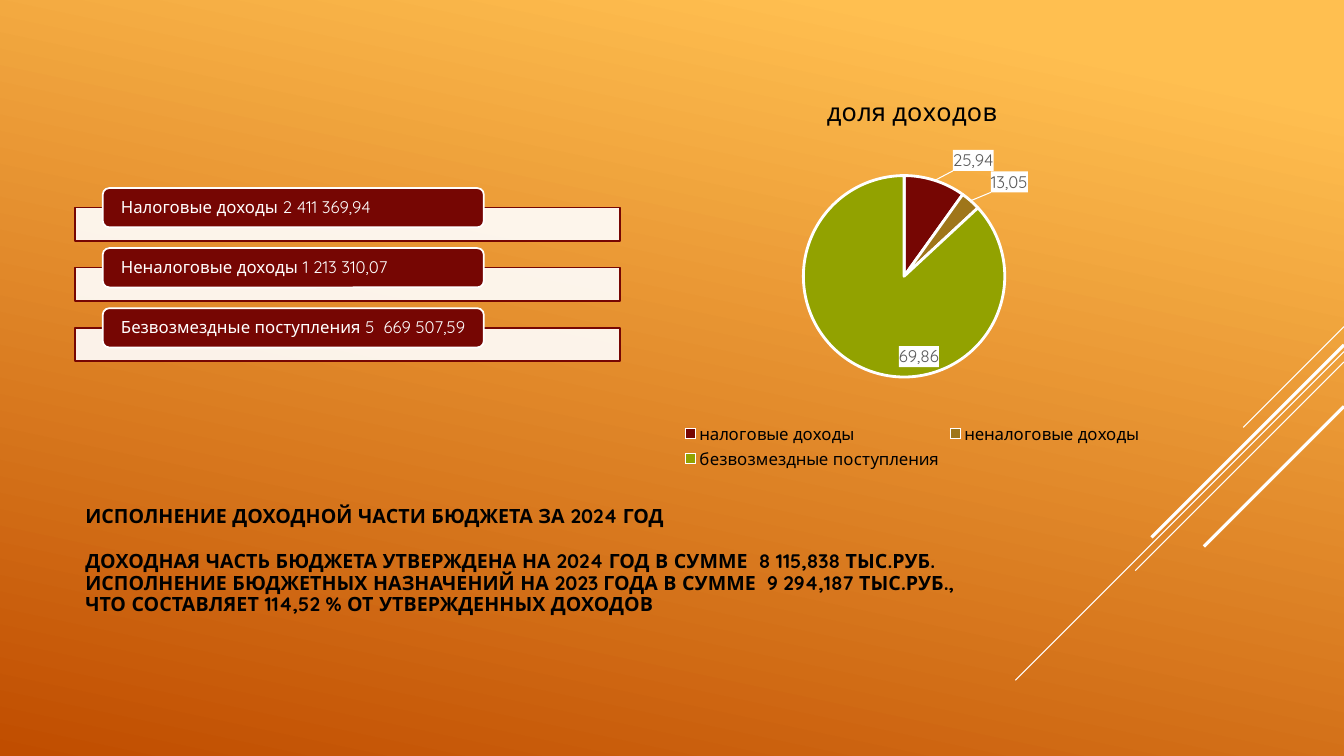
from dataclasses import dataclass

from lxml.etree import SubElement
from pptx import Presentation
from pptx.chart.data import CategoryChartData
from pptx.dml.color import RGBColor
from pptx.enum.chart import XL_CHART_TYPE, XL_LABEL_POSITION, XL_LEGEND_POSITION
from pptx.enum.shapes import MSO_CONNECTOR, MSO_SHAPE
from pptx.enum.text import MSO_ANCHOR, PP_ALIGN
from pptx.oxml import parse_xml
from pptx.oxml.ns import nsdecls, qn
from pptx.util import Cm, Pt


@dataclass(frozen=True)
class Theme:
    font: str = "Quicksand"
    glow: str = "FFBF50"
    ember: str = "C04D00"
    white: str = "FFFFFF"
    black: str = "000000"
    label: str = "595959"
    wine: str = "760603"
    slices: tuple = ("760603", "9F761A", "92A200")
    chart_title: int = 18
    heading: int = 14
    body: int = 12


THEME = Theme()
WIDTH, HEIGHT = 33.87, 19.05

# Top of each diagonal at the right edge, its run to the left, line width
DIAGONALS = [(8.23, 2.54, 0.75), (8.86, 8.28, 0.75), (9.12, 5.26, 0.75),
             (8.69, 4.85, 2.25), (10.24, 3.53, 2.25)]
INCOMES = ["Налоговые доходы 2 411 369,94",
           "Неналоговые доходы 1 213 310,07",
           "Безвозмездные поступления 5  669 507,59"]
SUMMARY = [["ИСПОЛНЕНИЕ ДОХОДНОЙ ЧАСТИ БЮДЖЕТА ЗА 2024 ГОД"],
           ["ДОХОДНАЯ ЧАСТЬ БЮДЖЕТА УТВЕРЖДЕНА НА 2024 ГОД В СУММЕ  8 115,838 ТЫС.РУБ.",
            "ИСПОЛНЕНИЕ БЮДЖЕТНЫХ НАЗНАЧЕНИЙ НА 2023 ГОДА В СУММЕ  9 294,187 ТЫС.РУБ.,",
            "ЧТО СОСТАВЛЯЕТ 114,52 % ОТ УТВЕРЖДЕННЫХ ДОХОДОВ"]]
SHARES = {"налоговые доходы": 9.9, "неналоговые доходы": 3.2,
          "безвозмездные поступления": 86.9}
# Label text, side of the slice edge, shift as a share of the chart
LABELS = [("25,94", XL_LABEL_POSITION.OUTSIDE_END, 0.03, -0.01),
          ("13,05", XL_LABEL_POSITION.OUTSIDE_END, 0.03, -0.01),
          ("69,86", XL_LABEL_POSITION.INSIDE_END, 0.06, 0.01)]


def rgb(color):
    return RGBColor.from_string(color)


def style_font(font, size, color, bold=False):
    font.name, font.size, font.bold = THEME.font, Pt(size), bold
    font.color.rgb = rgb(color)


def add_span(para, text, size, color, bold=False):
    span = para.add_run()
    span.text = text
    style_font(span.font, size, color, bold)


def add_panel(page, kind, box, fill, line):
    panel = page.shapes.add_shape(kind, *(Cm(length) for length in box))
    panel.shadow.inherit = False
    panel.fill.solid()
    panel.fill.fore_color.rgb = rgb(fill)
    panel.line.color.rgb = rgb(line)
    panel.line.width = Pt(1.25)
    return panel


def paint_background(page):
    fill = page.background.fill
    fill.gradient()
    fill.gradient_angle = 258
    stops = zip(fill.gradient_stops, (THEME.glow, THEME.ember), (0.1, 1.0))
    for stop, color, position in stops:
        stop.color.rgb = rgb(color)
        stop.position = position


def add_diagonals(page, right):
    for top, run, width in DIAGONALS:
        line = page.shapes.add_connector(MSO_CONNECTOR.STRAIGHT, Cm(right), Cm(top),
                                         Cm(right - run), Cm(top + run))
        line.line.color.rgb = rgb(THEME.white)
        line.line.width = Pt(width)
        SubElement(line._element.spPr, qn("a:effectLst"))


def add_income_list(page, box):
    left, top, width, height = box
    pitch = height / len(INCOMES)
    for index, income in enumerate(INCOMES):
        row = top + index * pitch
        # Pale band behind
        band = add_panel(page, MSO_SHAPE.RECTANGLE, (left, row + 0.49, width, 0.84),
                         THEME.white, THEME.wine)
        tint = band.fill._xPr.find(".//" + qn("a:srgbClr"))
        SubElement(tint, qn("a:alpha"), val="90000")
        # Dark plate with the amount
        plate = add_panel(page, MSO_SHAPE.ROUNDED_RECTANGLE,
                          (left + 0.69, row, width * 0.7, 0.99), THEME.wine, THEME.white)
        frame = plate.text_frame
        frame.word_wrap = True
        frame.vertical_anchor = MSO_ANCHOR.MIDDLE
        frame.margin_left = frame.margin_right = Cm(0.41)
        frame.margin_top = frame.margin_bottom = 0
        para = frame.paragraphs[0]
        para.alignment = PP_ALIGN.LEFT
        para.line_spacing = 0.9
        add_span(para, income, THEME.body, THEME.white)


def add_summary(page, box):
    frame = page.shapes.add_textbox(*(Cm(length) for length in box)).text_frame
    frame.word_wrap = True
    for index, lines in enumerate(SUMMARY):
        para = frame.add_paragraph() if index else frame.paragraphs[0]
        para.line_spacing = 0.9
        para.space_before = Pt(17 * index)
        for number, line in enumerate(lines):
            if number:
                para.add_line_break()
            add_span(para, line, THEME.heading, THEME.black, True)


def manual_layout(**places):
    parts = "".join(f'<c:{name} val="{value}"/>' for name, value in places.items())
    return parse_xml(f'<c:layout {nsdecls("c")}><c:manualLayout>{parts}'
                     '</c:manualLayout></c:layout>')


def label_slices(series):
    for index, (text, position, shift_x, shift_y) in enumerate(LABELS):
        label = series.points[index].data_label
        add_span(label.text_frame.paragraphs[0], text, THEME.body, THEME.label)
        label.position = position
        node = series._element.xpath(f"c:dLbls/c:dLbl[c:idx/@val={index}]")[0]
        node.find(qn("c:idx")).addnext(manual_layout(x=shift_x, y=shift_y))
        node.find(qn("c:tx")).addnext(parse_xml(
            f'<c:spPr {nsdecls("c", "a")}><a:solidFill><a:srgbClr val="{THEME.white}"/>'
            '</a:solidFill></c:spPr>'))
    labels = series.data_labels
    labels.show_value = True
    style_font(labels.font, THEME.body, THEME.label)
    # White leader lines
    for old in labels._element.xpath("c:showLeaderLines | c:leaderLines"):
        labels._element.remove(old)
    SubElement(labels._element, qn("c:showLeaderLines"), val="1")
    labels._element.append(parse_xml(
        f'<c:leaderLines {nsdecls("c", "a")}><c:spPr><a:ln w="9525"><a:solidFill>'
        f'<a:srgbClr val="{THEME.white}"/></a:solidFill></a:ln></c:spPr></c:leaderLines>'))


def add_share_chart(page, box):
    data = CategoryChartData()
    data.categories = list(SHARES)
    data.add_series("доля доходов", list(SHARES.values()))
    chart = page.shapes.add_chart(XL_CHART_TYPE.PIE, *(Cm(length) for length in box),
                                  data).chart
    style_font(chart.font, THEME.body, THEME.black)
    # Title and legend
    chart.has_title = True
    add_span(chart.chart_title.text_frame.paragraphs[0], "доля доходов",
             THEME.chart_title, THEME.black)
    chart.has_legend = True
    chart.legend.position = XL_LEGEND_POSITION.BOTTOM
    chart.legend.include_in_layout = False
    style_font(chart.legend.font, THEME.body, THEME.black)
    # Slices
    plot = chart.plots[0]
    plot.vary_by_categories = True
    series = plot.series[0]
    for index, color in enumerate(THEME.slices):
        look = series.points[index].format
        look.fill.solid()
        look.fill.fore_color.rgb = rgb(color)
        look.line.color.rgb = rgb(THEME.white)
        look.line.width = Pt(2)
    label_slices(series)
    # Place of the pie
    area = chart._chartSpace.xpath(".//c:plotArea")[0]
    for old in area.findall(qn("c:layout")):
        area.remove(old)
    area.insert(0, manual_layout(layoutTarget="inner", xMode="edge", yMode="edge",
                                 x=0.3, y=0.25, w=0.37, h=0.51))


def main():
    deck = Presentation()
    deck.slide_width, deck.slide_height = Cm(WIDTH), Cm(HEIGHT)
    page = deck.slides.add_slide(deck.slide_layouts[6])
    paint_background(page)
    add_diagonals(page, WIDTH)
    add_summary(page, (1.9, 12.65, 23.7, 3.3))
    add_income_list(page, (1.9, 4.74, 13.72, 4.54))
    add_share_chart(page, (16.13, 1.9, 13.72, 10.03))
    deck.save("out.pptx")


if __name__ == "__main__":
    main()
